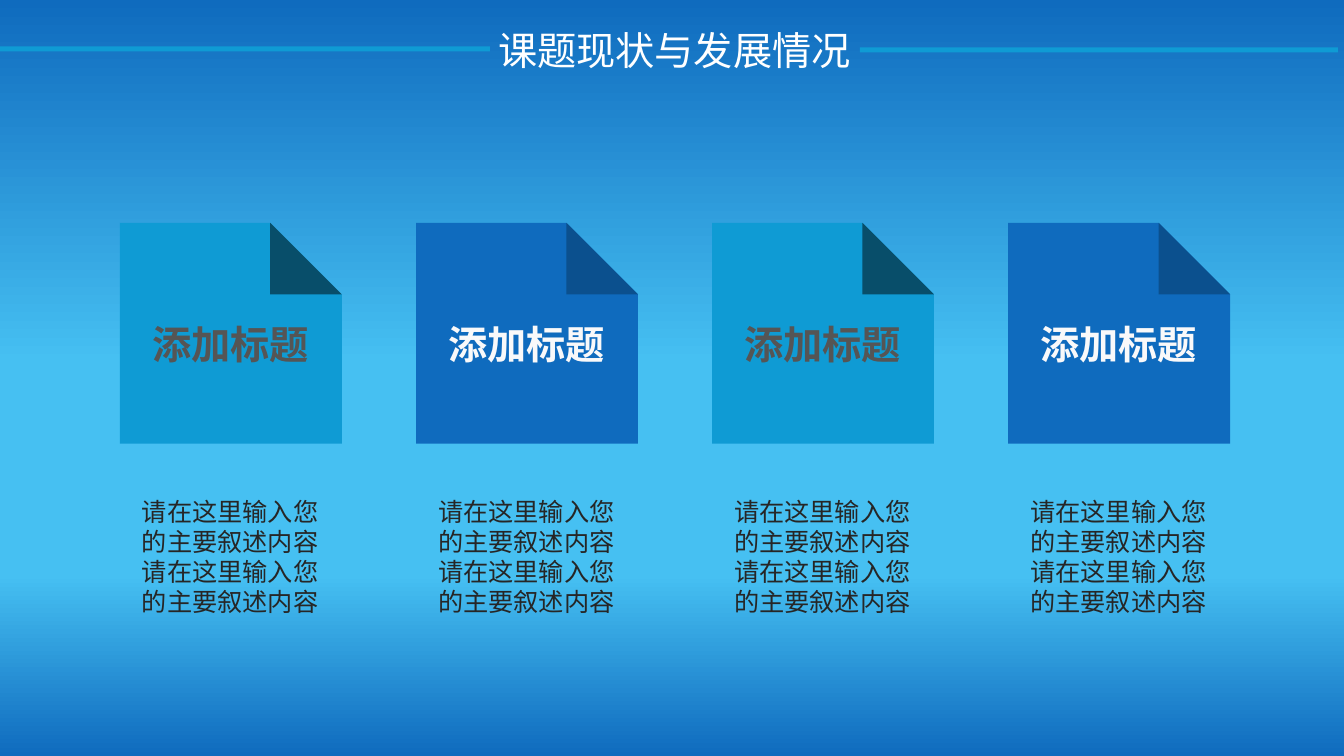
from lxml import etree
from pptx import Presentation
from pptx.dml.color import RGBColor
from pptx.enum.shapes import MSO_SHAPE as SHAPE
from pptx.enum.text import MSO_ANCHOR as ANCHOR, MSO_AUTO_SIZE as AUTO, PP_ALIGN as ALIGN
from pptx.oxml.ns import qn
from pptx.util import Inches, Pt

FONT = "Noto Sans CJK SC"
COLORS = {
    "cyan": "0F9BD4", "cyan_fold": "084E6A", "blue": "0F6BBE", "blue_fold": "0B508E",
    "sky": "46C0F2", "grey": "555555", "pale": "F9F9FA", "ink": "262626", "white": "FFFFFF",
}
STYLES = [("cyan", "cyan_fold", "grey"), ("blue", "blue_fold", "pale")]
LABELS = ["添加标题"] * 4
BODY = ["请在这里输入您", "的主要叙述内容"] * 2

# Column grid, in inches
FIRST_LEFT, LAST_LEFT = 1.19, 10
PITCH = (LAST_LEFT - FIRST_LEFT) / (len(LABELS) - 1)
TILE_TOP, TILE_W, TILE_H, FOLD = 2.21, 2.2, 2.19, 0.71


def rgb(name):
    return RGBColor.from_string(COLORS[name])


def paint(sp, color):
    sp.fill.solid()
    sp.fill.fore_color.rgb = rgb(color)
    sp.line.fill.background()
    sp.shadow.inherit = False


def write(tf, lines, size, color, bold=False, align=ALIGN.LEFT, wrap=False):
    tf.word_wrap = wrap
    tf.auto_size = AUTO.NONE
    tf.vertical_anchor = ANCHOR.TOP
    for i, line in enumerate(lines):
        p = tf.paragraphs[0] if i == 0 else tf.add_paragraph()
        p.alignment = align
        r = p.add_run()
        r.text = line
        r.font.size, r.font.bold, r.font.name = Pt(size), bold, FONT
        r.font.color.rgb = rgb(color)
        etree.SubElement(r.font._element, qn("a:ea")).set("typeface", FONT)


def add_rect(s, x, y, w, h, color):
    sp = s.shapes.add_shape(SHAPE.RECTANGLE, Inches(x), Inches(y), Inches(w), Inches(h))
    paint(sp, color)
    return sp


def add_outline(s, points, color):
    pts = [(Inches(x), Inches(y)) for x, y in points]
    fb = s.shapes.build_freeform(*pts[0], scale=1.0)
    fb.add_line_segments(pts[1:], close=True)
    paint(fb.convert_to_shape(), color)


def add_background(s):
    fill = s.background.fill
    fill.gradient()
    grad = s.background._cSld.find(".//" + qn("a:gradFill"))
    stops = grad.find(qn("a:gsLst"))
    for stop in list(stops):
        stops.remove(stop)
    for pos, color in [(0, "blue"), (48, "sky"), (76, "sky"), (100, "blue")]:
        gs = etree.SubElement(stops, qn("a:gs"), pos=str(pos * 1000))
        etree.SubElement(gs, qn("a:srgbClr"), val=COLORS[color])
    lin = grad.find(qn("a:lin"))
    lin.set("ang", str(90 * 60000))
    lin.set("scaled", "0")


def add_header(s, x, y, w, h):
    # Rules on both sides of the title
    add_rect(s, 0, y + 0.25, x + 0.02, 0.05, "cyan")
    add_rect(s, x + w - 0.15, y + 0.26, 4.74, 0.05, "cyan")
    title = s.shapes.title
    title.left, title.top, title.width, title.height = map(Inches, (x, y, w, h))
    write(title.text_frame, ["课题现状与发展情况"], 28, "white", wrap=True)


def add_tile(s, x, y, w, h, label, style):
    face, fold, ink = style
    right, bottom, crease = x + w, y + h, x + w - FOLD
    # Sheet with a cut corner, then the folded corner
    add_outline(s, [(x, y), (crease, y), (right, y + FOLD), (right, bottom), (x, bottom)], face)
    add_outline(s, [(crease, y), (right, y + FOLD), (crease, y + FOLD)], fold)
    sp = add_rect(s, x + 0.21, y + 0.92, 1.77, 0.57, face)
    write(sp.text_frame, [label], 28, ink, bold=True, align=ALIGN.CENTER)


def add_body(s, x, y, w, h):
    tb = s.shapes.add_textbox(Inches(x), Inches(y), Inches(w), Inches(h))
    write(tb.text_frame, BODY, 18, "ink", wrap=True)


def main():
    prs = Presentation()
    prs.slide_width, prs.slide_height = Inches(13.33), Inches(7.5)
    s = prs.slides.add_slide(prs.slide_layouts[5])
    add_background(s)
    add_header(s, 4.84, 0.21, 3.84, 0.57)
    for i, label in enumerate(LABELS):
        x = FIRST_LEFT + i * PITCH
        add_tile(s, x, TILE_TOP, TILE_W, TILE_H, label, STYLES[i % 2])
        add_body(s, x + 0.12, 4.87, 1.97, 1.62)
    prs.save("out.pptx")


if __name__ == "__main__":
    main()
